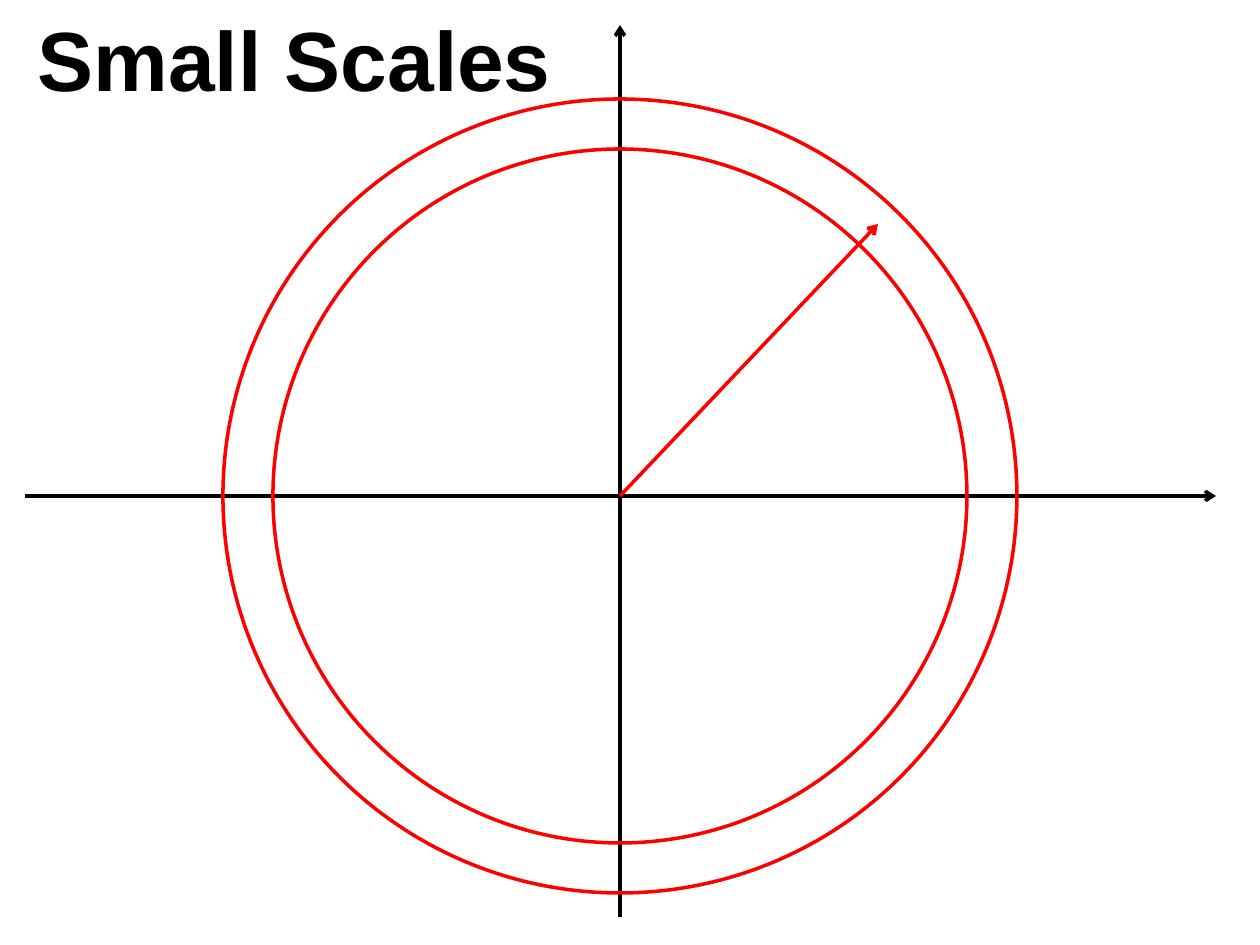
from typing import Any, NamedTuple

from lxml.etree import SubElement
from pptx import Presentation
from pptx.dml.color import RGBColor
from pptx.enum.shapes import MSO_CONNECTOR, MSO_SHAPE
from pptx.enum.text import MSO_ANCHOR, PP_ALIGN
from pptx.oxml.ns import qn
from pptx.slide import Slide
from pptx.util import Emu, Pt

EMU_PER_PX = 914400 / 126
COLOURS = {"background": "FFFFFF", "axis": "000000", "scale": "FF0000", "title": "000000"}
CENTRE_X, CENTRE_Y = 620, 496
RADII = (397, 347)


class Arrow(NamedTuple):
    start_x: int
    start_y: int
    end_x: int
    end_y: int
    colour: str


AXES = (
    Arrow(CENTRE_X, 917, CENTRE_X, 25, "axis"),
    Arrow(25, CENTRE_Y, 1216, CENTRE_Y, "axis"),
)
RADIUS_VECTOR = Arrow(CENTRE_X, CENTRE_Y, 878, 224, "scale")


def px(length: int) -> Emu:
    return Emu(round(length * EMU_PER_PX))


def rgb(colour: str) -> RGBColor:
    return RGBColor.from_string(COLOURS[colour])


def apply_format(target: Any, values: dict[str, Any]) -> None:
    for attribute, value in values.items():
        setattr(target, attribute, value)


def style_line(line: Any, colour: str) -> None:
    line.width = Pt(2)
    line.color.rgb = rgb(colour)


def draw_arrow(slide: Slide, arrow: Arrow) -> None:
    ends = (px(length) for length in arrow[:4])
    connector = slide.shapes.add_connector(MSO_CONNECTOR.STRAIGHT, *ends)
    style_line(connector.line, arrow.colour)
    SubElement(connector.line._get_or_add_ln(), qn("a:tailEnd"), type="arrow")
    SubElement(connector._element.spPr, qn("a:effectLst"))


def draw_circle(slide: Slide, radius: int) -> None:
    circle = slide.shapes.add_shape(
        MSO_SHAPE.OVAL,
        px(CENTRE_X - radius),
        px(CENTRE_Y - radius),
        px(2 * radius),
        px(2 * radius),
    )
    circle.shadow.inherit = False
    circle.fill.background()
    style_line(circle.line, "scale")


def write_title(slide: Slide, wording: str) -> None:
    title = slide.shapes.title
    apply_format(title, {"left": px(25), "top": px(0), "width": px(563), "height": px(115)})
    frame = title.text_frame
    frame.text = wording
    apply_format(frame, {"word_wrap": True, "vertical_anchor": MSO_ANCHOR.BOTTOM})
    heading = frame.paragraphs[0]
    heading.alignment = PP_ALIGN.LEFT
    font = heading.runs[0].font
    apply_format(font, {"name": "Arial", "size": Pt(48), "bold": True})
    font.color.rgb = rgb("title")


def main() -> None:
    presentation = Presentation()
    apply_format(presentation, {"slide_width": px(1260), "slide_height": px(945)})
    slide = presentation.slides.add_slide(presentation.slide_layouts.get_by_name("Title Only"))
    slide.background.fill.solid()
    slide.background.fill.fore_color.rgb = rgb("background")
    for axis in AXES:
        draw_arrow(slide, axis)
    for radius in RADII:
        draw_circle(slide, radius)
    draw_arrow(slide, RADIUS_VECTOR)
    write_title(slide, "Small Scales")
    presentation.save("out.pptx")


if __name__ == "__main__":
    main()
